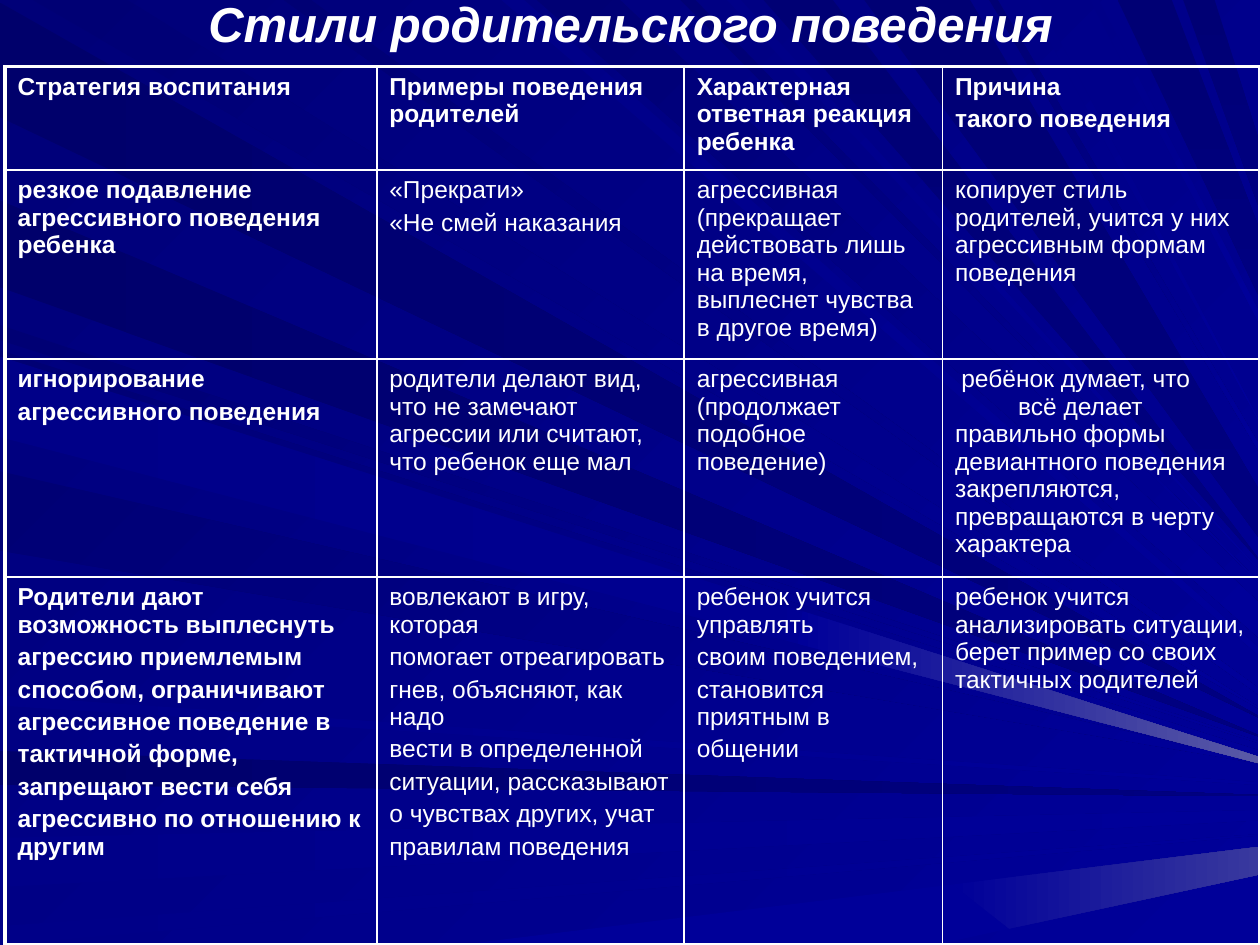
import pptx
import pptx.dml.color
import pptx.enum.text
import pptx.oxml
import pptx.oxml.ns
import pptx.util

WIDE, HIGH = 1000, 750  # grid columns and rows
UNIT = pptx.util.Inches(10) // WIDE

HUES = {"ink": "00006B", "night": "000074", "navy": "000078", "deep": "000080",
        "blue": "000088", "sky": "000099", "pale": "5A5AA6", "dim": "39399E",
        "white": "FFFFFF"}

# from hue, to hue, clockwise angle
TONES = {"page": ("navy", "sky", 45), "dark": ("ink", "deep", 0),
         "fall": ("night", "deep", 90), "slant": ("night", "sky", 45),
         "soft": ("blue", "sky", 45), "flat": ("blue", "sky", 0),
         "plain": ("sky", "sky", 0), "shine": ("sky", "pale", 0),
         "gleam": ("sky", "dim", 0)}

# tone, start and end on the slide's edge, height and width of the far end
RAYS = [
    ("left", "dark", 2, 93, 569, 1),
    ("top", "slant", 26, 101, 562, 1),
    ("left", "dark", 596, 623, 631, 1),
    ("left", "flat", 665, 704, 643, 8),
    ("left", "flat", 735, 750, 662, 1),
    ("left", "slant", 258, 270, 589, 1),
    ("left", "dark", 159, 228, 584, 1),
    ("top", "soft", 398, 416, 515, 6),
    ("top", "slant", 426, 492, 479, 28),
    ("top", "slant", 540, 552, 463, 1),
    ("top", "fall", 606, 661, 445, 1),
    ("top", "fall", 887, 930, 183, 54),
    ("top", "fall", 939, 964, 114, 53),
    ("left", "slant", 278, 342, 596, 6),
    ("left", "slant", 374, 437, 605, 1),
    ("left", "flat", 552, 560, 621, 2),
    ("top", "slant", 225, 247, 547, 5),
    ("top", "soft", 577, 588, 453, 1),
    ("top", "fall", 686, 770, 390, 38),
    ("top", "slant", 785, 792, 354, 6),
    ("top", "soft", 815, 824, 335, 1),
    ("top", "soft", 865, 872, 249, 9),
    ("left", "flat", 283, 347, 601, 5),
]
BEAMS = [
    ("plain", [(364, 750), (742, 750), (801, 737), (756, 702)]),
    ("gleam", [(WIDE, 694), (WIDE, 672), (756, 702), (801, 737)]),
    ("shine", [(637, 485), (633, 511), (WIDE, 606), (WIDE, 601)]),
]

COLS = [295, 244, 205, 252]
ROWS = [82, 150, 173, 292]
CELLS = [
    ["Стратегия воспитания", "Примеры поведения родителей",
     "Характерная ответная реакция ребенка", "Причина\nтакого поведения"],
    ["резкое подавление агрессивного поведения ребенка",
     "«Прекрати»\n«Не смей наказания",
     "агрессивная (прекращает действовать лишь на время, выплеснет чувства в другое время)",
     "копирует стиль родителей, учится у них агрессивным формам поведения"],
    ["игнорирование\nагрессивного поведения",
     "родители делают вид, что не замечают агрессии или считают, что ребенок еще мал",
     "агрессивная (продолжает подобное поведение)",
     "ребёнок думает, что\v\tвсё делает правильно формы девиантного поведения "
     "закрепляются, превращаются в черту характера"],
    ["Родители дают возможность выплеснуть\nагрессию приемлемым\n"
     "способом, ограничивают\nагрессивное поведение в\nтактичной форме,\n"
     "запрещают вести себя\nагрессивно по отношению к другим",
     "вовлекают в игру, которая\nпомогает отреагировать\nгнев, объясняют, как надо\n"
     "вести в определенной\nситуации, рассказывают\nо чувствах других, учат\n"
     "правилам поведения",
     "ребенок учится управлять\nсвоим поведением,\nстановится приятным в\nобщении",
     "ребенок учится анализировать ситуации, берет пример со своих тактичных родителей"],
]


def rgb(hue):
    return pptx.dml.color.RGBColor.from_string(HUES[hue])


class Deck:
    font = {"name": "Arial"}
    thick, thin = 2.25, 1

    def __init__(self):
        self.file = pptx.Presentation()
        self.file.slide_width, self.file.slide_height = WIDE * UNIT, HIGH * UNIT
        self.slide = self.file.slides.add_slide(self.file.slide_layouts[5])
        self.blend(self.slide.background.fill, "page")

    def style(self, para, **form):
        for key, val in {**self.font, **form}.items():
            setattr(para.font, key, val)
        para.font.color.rgb = rgb("white")

    def blend(self, fill, tone):
        """Fill with a tone's gradient, or solid if both hues match."""
        start, end, turn = TONES[tone]
        if start == end:
            fill.solid()
            fill.fore_color.rgb = rgb(start)
            return
        fill.gradient()
        fill.gradient_angle = -turn % 360
        for stop, hue in zip(fill.gradient_stops, (start, end)):
            stop.color.rgb = rgb(hue)

    def beam(self, tone, spots):
        pen = self.slide.shapes.build_freeform(*spots[0], scale=UNIT)
        pen.add_line_segments(spots[1:], close=True)
        shape = pen.convert_to_shape()
        shape.shadow.inherit = False
        shape.line.fill.background()
        self.blend(shape.fill, tone)

    def ray(self, side, tone, start, end, far, mouth):
        """Draw a band from the left or top edge to the right edge."""
        low, high = (WIDE, far + mouth), (WIDE, far)
        if side == "left":
            self.beam(tone, [(0, start), (0, end), low, high])
        else:
            self.beam(tone, [(start, 0), (end, 0), high, low])

    def title(self, text, left, top, wide, high):
        box = self.slide.shapes.title
        place = {"left": left, "top": top, "width": wide, "height": high}
        for key, val in place.items():
            setattr(box, key, val * UNIT)
        frame = box.text_frame
        frame.text = text
        frame.word_wrap = True
        frame.auto_size = pptx.enum.text.MSO_AUTO_SIZE.NONE
        frame.vertical_anchor = pptx.enum.text.MSO_ANCHOR.MIDDLE
        para = frame.paragraphs[0]
        para.alignment = pptx.enum.text.PP_ALIGN.CENTER
        self.style(para, size=pptx.util.Pt(28), bold=True, italic=True)
        self.slide.shapes._spTree.append(box._element)  # in front of the rays

    def edge(self, cell, sides):
        """Draw cell borders from a dict of side letter to width in points."""
        props = cell._tc.get_or_add_tcPr()
        for spot, (side, width) in enumerate(sides.items()):
            props.insert(spot, pptx.oxml.parse_xml(
                f'<a:ln{side} {pptx.oxml.ns.nsdecls("a")} w="{pptx.util.Pt(width)}">'
                f'<a:solidFill><a:srgbClr val="{HUES["white"]}"/></a:solidFill></a:ln{side}>'))

    def tab(self, para, indent, stop):
        props = para._p.get_or_add_pPr()
        props.set("marL", "0")
        props.set("indent", str(indent * UNIT))
        props.append(pptx.oxml.parse_xml(
            f'<a:tabLst {pptx.oxml.ns.nsdecls("a")}>'
            f'<a:tab pos="{stop * UNIT}" algn="l"/></a:tabLst>'))

    def table(self, cells, left, top, cols, rows):
        last, end = len(rows) - 1, len(cols) - 1
        grid = self.slide.shapes.add_table(
            len(rows), len(cols), left * UNIT, top * UNIT,
            sum(cols) * UNIT, sum(rows) * UNIT).table
        grid.first_row = grid.horz_banding = False
        for col, wide in zip(grid.columns, cols):
            col.width = wide * UNIT
        for r, line in enumerate(cells):
            grid.rows[r].height = rows[r] * UNIT
            for c, text in enumerate(line):
                cell = grid.cell(r, c)
                cell.fill.background()
                outer = {"L": c == 0, "R": c == end, "T": r == 0, "B": r == last}
                self.edge(cell, {side: self.thick if out else self.thin
                                 for side, out in outer.items()})
                cell.text_frame.text = text
                for n, para in enumerate(cell.text_frame.paragraphs):
                    if "\t" in text:
                        self.tab(para, 5, 92)
                    if n:
                        para.space_before = pptx.util.Pt(2.8)
                    self.style(para, size=pptx.util.Pt(14), bold=r == 0 or c == 0)


def main():
    deck = Deck()
    for ray in RAYS:
        deck.ray(*ray)
    for beam in BEAMS:
        deck.beam(*beam)
    deck.title("Стили родительского поведения", 35, 0, 931, 36)
    deck.table(CELLS, 4, 53, COLS, ROWS)
    deck.file.save("out.pptx")


if __name__ == "__main__":
    main()
